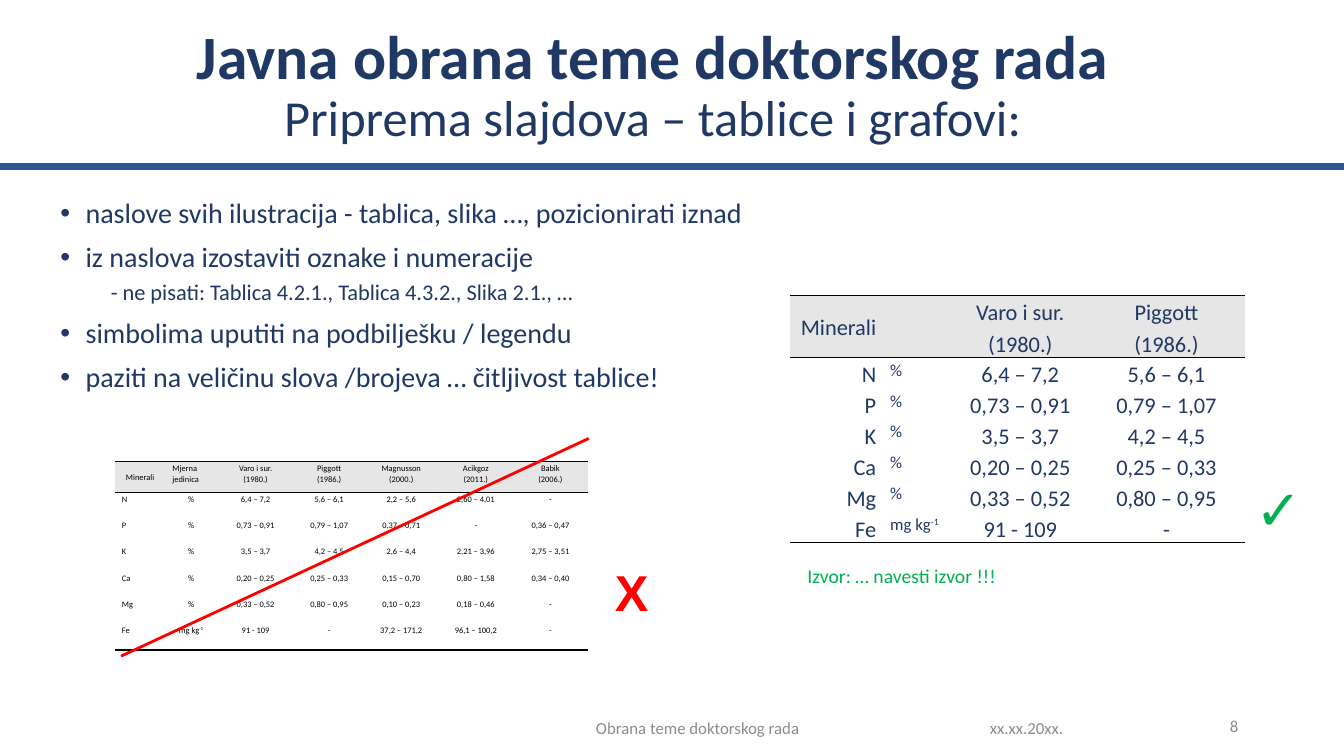
from pptx import Presentation
from pptx.dml.color import RGBColor
from pptx.enum.shapes import MSO_CONNECTOR as Link
from pptx.enum.text import MSO_ANCHOR as Anchor, PP_ALIGN as Align
from pptx.oxml import parse_xml
from pptx.oxml.ns import nsdecls, qn
from pptx.util import Inches, Pt

NAVY, BLUE, GREEN, RED = "203864", "2F5597", "00B050", "FF0000"
GREY, PALE, BLACK = "8C8C8C", "E6E6E6", "000000"
SIDES = {"l": Align.LEFT, "c": Align.CENTER, "r": Align.RIGHT}

TITLE = [("Javna obrana teme doktorskog rada", 44, True),
         ("Priprema slajdova – tablice i grafovi:", 36, False)]
POINTS = [
    (0, "naslove svih ilustracija - tablica, slika …, pozicionirati iznad"),
    (0, "iz naslova izostaviti oznake i numeracije"),
    (1, "- ne pisati: Tablica 4.2.1., Tablica 4.3.2., Slika 2.1., …"),
    (0, "simbolima uputiti na podbilješku / legendu"),
    (0, "paziti na veličinu slova /brojeva … čitljivost tablice!"),
]
HEADS = ["Minerali", "Mjerna\njedinica", "Varo i sur.\n(1980.)",
         "Piggott\n(1986.)", "Magnusson\n(2000.)", "Acikgoz\n(2011.)",
         "Babik\n(2006.)"]
DATA = [
    ["N", "%", "6,4 – 7,2", "5,6 – 6,1", "2,2 – 5,6", "2,60 – 4,01", "-"],
    ["P", "%", "0,73 – 0,91", "0,79 – 1,07", "0,37 – 0,71", "-", "0,36 – 0,47"],
    ["K", "%", "3,5 – 3,7", "4,2 – 4,5", "2,6 – 4,4", "2,21 – 3,96", "2,75 – 3,51"],
    ["Ca", "%", "0,20 – 0,25", "0,25 – 0,33", "0,15 – 0,70", "0,80 – 1,58", "0,34 – 0,40"],
    ["Mg", "%", "0,33 – 0,52", "0,80 – 0,95", "0,10 – 0,23", "0,18 – 0,46", "-"],
    ["Fe", "mg kg^-1", "91 - 109", "-", "37,2 – 171,2", "96,1 – 100,2", "-"],
]
SMALL = dict(at=(1.14, 4.58), cols=[0.5, 0.51, 0.77, 0.69, 0.74, 0.74, 0.74],
             rows=(0.31, 0.26), heads=HEADS, sides=("clccccc", "lcccccc"),
             size=6, unit=6, color=BLACK)
LARGE = dict(at=(7.84, 2.93), cols=[0.92, 0.69, 1.34, 1.56],
             rows=(0.49, 0.25), heads=[HEADS[0], ""] + HEADS[2:4],
             sides=("rlcc", "rlcc"), size=16, unit=12, color=NAVY)
LABELS = [
    ("xx.xx.20xx.", (9.72, 7.02, 1.2, 0.4), 12, GREY, "l", False, "Calibri"),
    ("8", (11.71, 7, 0.67, 0.41), 12, GREY, "r", False, "Calibri"),
    ("Obrana teme doktorskog rada", (5.57, 7.02, 2.7, 0.4), 12, GREY, "c", False, "Calibri"),
    ("Izvor: … navesti izvor !!!", (7.91, 5.54, 2.7, 0.34), 14, GREEN, "l", False, "Calibri"),
    ("✓", (12.35, 4.66, 0.64, 0.77), 40, GREEN, "l", True, "Calibri"),
    ("X", (6, 5.52, 0.55, 0.71), 36, RED, "l", True, "Arial"),
]
LINES = [((0, 1.65), (13.33, 1.65), BLUE, 5),
         ((1.2, 6.51), (5.84, 4.35), RED, 2)]


def paint(hue):
    return RGBColor.from_string(hue)


def style(run, size, hue, bold=False, face="Calibri"):
    font = run.font
    font.size, font.bold, font.name = Pt(size), bold, face
    font.color.rgb = paint(hue)


def add_box(slide, place, anchor=Anchor.TOP):
    frame = slide.shapes.add_textbox(*map(Inches, place)).text_frame
    frame.word_wrap = True
    frame.vertical_anchor = anchor
    return frame


def add_line(slide, start, end, hue, width):
    line = slide.shapes.add_connector(Link.STRAIGHT, *map(Inches, start + end))
    line.line.color.rgb = paint(hue)
    line.line.width = Pt(width)
    line._element.spPr.append(parse_xml(f"<a:effectLst {nsdecls('a')}/>"))


def add_title(slide):
    frame = add_box(slide, (0.35, 0.18, 12.25, 1.36), Anchor.MIDDLE)
    frame.text = "\n".join(text for text, *_ in TITLE)
    for para, (_, size, bold) in zip(frame.paragraphs, TITLE):
        para.alignment, para.line_spacing = Align.CENTER, 0.9
        style(para.runs[0], size, NAVY, bold)


def add_points(slide):
    frame = add_box(slide, (0.5, 1.93, 7.19, 2.21))
    frame.text = "\n".join(text for _, text in POINTS)
    for i, (para, (level, _)) in enumerate(zip(frame.paragraphs, POINTS)):
        para.level, para.line_spacing = level, 0.9
        para.space_before = Pt((5 if level else 10) if i else 0)
        props = para._p.get_or_add_pPr()
        props.set("marL", str(Inches(0.5 if level else 0.25)))
        props.set("indent", str(Inches(0 if level else -0.25)))
        if not level:
            props.append(parse_xml(f'<a:buFont {nsdecls("a")} typeface="Arial"/>'))
            props.append(parse_xml(f'<a:buChar {nsdecls("a")} char="•"/>'))
        style(para.runs[0], 16 if level else 20, NAVY)


def add_edges(cell, top, bottom):
    fill = f'<a:solidFill><a:srgbClr val="{BLACK}"/></a:solidFill>'
    props = cell._tc.get_or_add_tcPr()
    edges = [("lnL", False), ("lnR", False), ("lnT", top), ("lnB", bottom)]
    for i, (tag, shown) in enumerate(edges):
        body = fill if shown else "<a:noFill/>"
        props.insert(i, parse_xml(
            f'<a:{tag} {nsdecls("a")} w="{Pt(1)}">{body}</a:{tag}>'))


def fill_cell(cell, text, size, hue, side):
    cell.margin_left = cell.margin_right = Inches(0.07)
    cell.margin_top = cell.margin_bottom = 0
    base, _, power = text.partition("^")
    cell.text_frame.text = base
    for para in cell.text_frame.paragraphs:
        para.alignment, para.line_spacing = SIDES[side], 1.15
        if power:
            para.add_run().text = power
        for run in para.runs:
            style(run, size, hue)
        if power:
            para.runs[-1].font._element.set("baseline", "30000")


def add_grid(slide, at, cols, rows, heads, sides, size, unit, color):
    lines = [heads] + [row[:len(cols)] for row in DATA]
    last = len(lines) - 1
    high = rows[0] + rows[1] * last
    frame = slide.shapes.add_table(len(lines), len(cols),
                                   *map(Inches, at + (sum(cols), high)))
    table = frame.table
    table.first_row = table.horz_banding = False
    look = table._tbl.tblPr.find(qn("a:tableStyleId"))
    look.text = "{2D5ABB26-0587-4C30-8999-92F81FD0307C}"
    for col, width in zip(table.columns, cols):
        col.width = Inches(width)
    for r, line in enumerate(lines):
        table.rows[r].height = Inches(rows[min(r, 1)])
        for c, text in enumerate(line):
            cell = table.cell(r, c)
            fill_cell(cell, text, unit if r and c == 1 else size, color,
                      sides[min(r, 1)][c])
            if r == 0:
                cell.fill.solid()
                cell.fill.fore_color.rgb = paint(PALE)
            else:
                cell.fill.background()
            add_edges(cell, r < 2, r in (0, last))
    table.cell(0, 0).vertical_anchor = Anchor.MIDDLE


def add_label(slide, text, place, size, hue, side, bold, face):
    frame = add_box(slide, place, Anchor.TOP if bold else Anchor.MIDDLE)
    frame.text = text
    frame.paragraphs[0].alignment = SIDES[side]
    style(frame.paragraphs[0].runs[0], size, hue, bold, face)


def main():
    deck = Presentation()
    deck.slide_width, deck.slide_height = Inches(13.33), Inches(7.5)
    slide = deck.slides.add_slide(deck.slide_layouts[6])
    add_title(slide)
    add_points(slide)
    for grid in (SMALL, LARGE):
        add_grid(slide, **grid)
    for line in LINES:
        add_line(slide, *line)
    for label in LABELS:
        add_label(slide, *label)
    deck.save("out.pptx")


if __name__ == "__main__":
    main()
